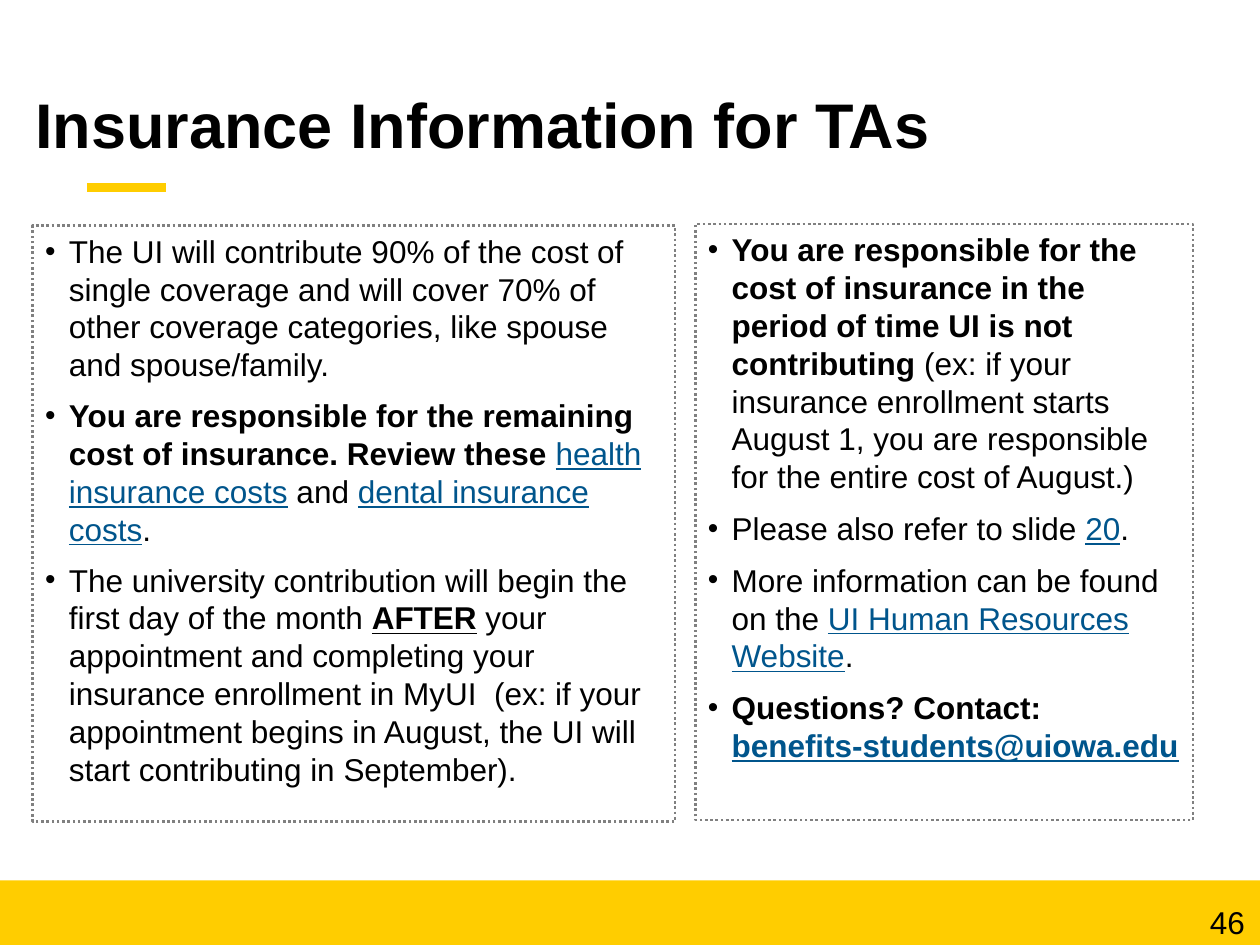
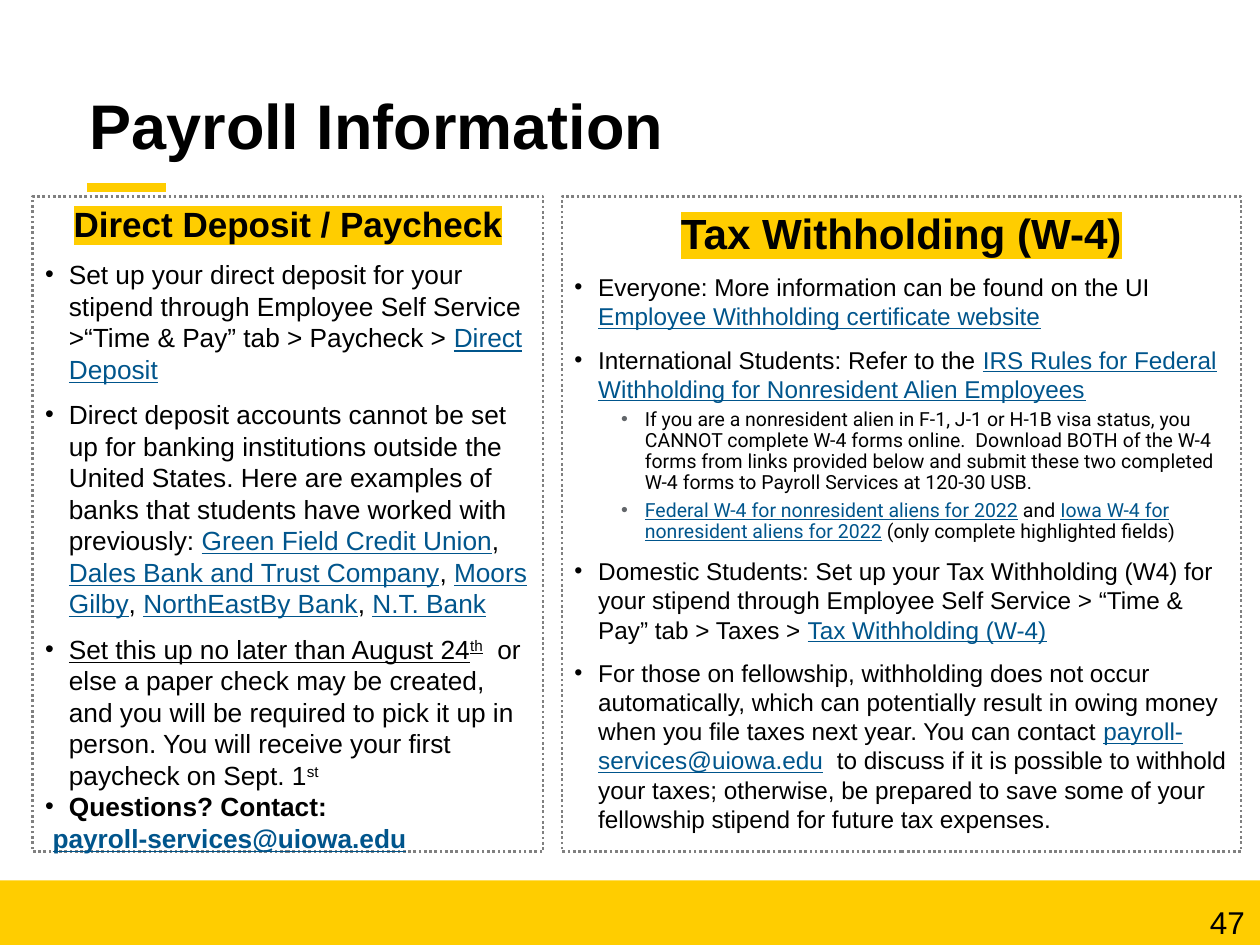
"""Build two slides on insurance and payroll for teaching assistants."""
from lxml import etree
from pptx import Presentation
from pptx.dml.color import RGBColor
from pptx.enum.dml import MSO_LINE
from pptx.enum.shapes import MSO_CONNECTOR, MSO_SHAPE
from pptx.enum.text import MSO_ANCHOR, PP_ALIGN
from pptx.oxml.ns import qn
from pptx.util import Cm, Pt

RECT = MSO_SHAPE.RECTANGLE
LINE = MSO_CONNECTOR.STRAIGHT
DOTS = MSO_LINE.ROUND_DOT
TOP, MID = MSO_ANCHOR.TOP, MSO_ANCHOR.MIDDLE
LEFT, CENTER = PP_ALIGN.LEFT, PP_ALIGN.CENTER

COLORS = {"gold": "FFCD00", "text": "000000", "link": "00558C",
          "edge": "808080", "mark": "62666A"}
FONT = "Arial"
WIDE, HIGH = 25.4, 19.05
PITCH = 1.2

# Run styles: b bold, u underlined, l link, s superscript, h highlighted
COVER = [
    ("item", [("The UI will contribute 90% of the cost of single coverage and will cover 70% of "
               "other coverage categories, like spouse and spouse/family.", "")]),
    ("item", [("You are responsible for the remaining cost of insurance. Review these ", "b"),
              ("health insurance costs", "l"), (" and ", ""),
              ("dental insurance costs", "l"), (".", "")]),
    ("item", [("The university contribution will begin the first day of the month ", ""),
              ("AFTER", "bu"),
              (" your appointment and completing your insurance enrollment in MyUI  (ex: if your "
               "appointment begins in August, the UI will start contributing in September).", "")]),
]
COSTS = [
    ("item", [("You are responsible for the cost of insurance in the period of time UI is not "
               "contributing ", "b"),
              ("(ex: if your insurance enrollment starts August 1, you are responsible for the "
               "entire cost of August.)", "")]),
    ("item", [("Please also refer to slide ", ""), ("20", "l"), (".", "")]),
    ("item", [("More information can be found on the ", ""),
              ("UI Human Resources Website", "l"), (".", "")]),
    ("item", [("Questions? Contact: ", "b"), ("benefits-students@uiowa.edu", "bl")]),
]
DEPOSIT = [
    ("head", [("Direct Deposit / Paycheck", "bh")]),
    ("item", [("Set up your direct deposit for your stipend through Employee Self Service "
               ">“Time & Pay” tab > Paycheck > ", ""), ("Direct Deposit", "l")]),
    ("item", [("Direct deposit accounts cannot be set up for banking institutions outside the "
               "United States. Here are examples of banks that students have worked with "
               "previously: ", ""),
              ("Green Field Credit Union", "l"), (", ", ""),
              ("Dales Bank and Trust Company", "l"), (", ", ""),
              ("Moors Gilby", "l"), (", ", ""), ("NorthEastBy Bank", "l"), (", ", ""),
              ("N.T. Bank", "l")]),
    ("item", [("Set this up no later than August 24", "u"), ("th", "us"),
              ("  or else a paper check may be created, and you will be required to pick it up "
               "in person. You will receive your first paycheck on Sept. 1", ""), ("st", "s")]),
    ("ask", [("Questions? Contact:", "b")]),
    ("mail", [("payroll-services@uiowa.edu", "bl")]),
]
TAX = [
    ("head", [("Tax Withholding (W-4)", "bh")]),
    ("item", [("Everyone: More information can be found on the UI ", ""),
              ("Employee Withholding certificate website", "l")]),
    ("item", [("International Students: Refer to the ", ""),
              ("IRS Rules for Federal Withholding for Nonresident Alien Employees", "l")]),
    ("sub", [("If you are a nonresident alien in F-1, J-1 or H-1B visa status, you CANNOT complete "
              "W-4 forms online.  Download BOTH of the W-4 forms from links provided below and "
              "submit these two completed W-4 forms to Payroll Services at 120-30 USB.", "")]),
    ("sub", [("Federal W-4 for nonresident aliens for 2022", "l"), (" and ", ""),
             ("Iowa W-4 for nonresident aliens for 2022", "l"),
             (" (only complete highlighted fields)", "")]),
    ("item", [("Domestic Students: Set up your Tax Withholding (W4) for your stipend through "
               "Employee Self Service > “Time & Pay” tab > Taxes > ", ""),
              ("Tax Withholding (W-4)", "l")]),
    ("item", [("For those on fellowship, withholding does not occur automatically, which can "
               "potentially result in owing money when you file taxes next year. You can "
               "contact ", ""), ("payroll-services@uiowa.edu", "l"),
              ("  to discuss if it is possible to withhold your taxes; otherwise, be prepared to "
               "save some of your fellowship stipend for future tax expenses.", "")]),
]

# Box: left, top, width, height in cm, then item size, head size, head scale, gap before items
SLIDES = [
    {"title": "Insurance Information for TAs", "left": 0.46, "top": 1.35, "page": "46",
     "boxes": [((0.66, 4.55, 12.95, 12.01), 18, 18, 1, 7.5, COVER),
               ((14.02, 4.52, 10.03, 12.01), 18, 18, 1, 8, COSTS)]},
    {"title": "Payroll Information", "left": 1.55, "top": 1.37, "page": "47",
     "boxes": [((0.66, 3.96, 10.29, 13.21), 15, 20, 1, 8, DEPOSIT),
               ((11.33, 3.96, 13.69, 13.21), 13.9, 24.1, 1.1, 8, TAX)]},
]


def rgb(name):
    return RGBColor.from_string(COLORS[name])


def add_run(para, text, style, size, face=FONT):
    run = para.add_run()
    run.text = text
    font = run.font
    font.size, font.name = Pt(size), face
    font.bold = "b" in style
    font.underline = "u" in style or "l" in style
    font.color.rgb = rgb("link" if "l" in style else "text")
    props = font._element
    if "s" in style:
        props.set("baseline", "30000")
    if "h" in style:
        mark = etree.Element(qn("a:highlight"))
        etree.SubElement(mark, qn("a:srgbClr"), val=COLORS["gold"])
        props.find(qn("a:latin")).addprevious(mark)


def set_para(para, size, scale=1, gap=0, align=LEFT):
    para.alignment = align
    para.line_spacing = Pt(round(size * PITCH * scale, 1))
    para.space_before = Pt(gap)


def indent(para, left, hang):
    props = para._p.get_or_add_pPr()
    props.set("marL", str(Cm(left)))
    props.set("indent", str(-Cm(hang)))
    return props


def add_mark(para, kind):
    sub = kind == "sub"
    props = indent(para, 1.42 if sub else 0.48, 0.48)
    if sub:
        tint = etree.SubElement(props, qn("a:buClr"))
        etree.SubElement(tint, qn("a:srgbClr"), val=COLORS["mark"])
    else:
        etree.SubElement(props, qn("a:buSzPct"), val="95000")
    etree.SubElement(props, qn("a:buFont"), typeface=FONT)
    etree.SubElement(props, qn("a:buChar"), char="•")


def add_rect(slide, place):
    shape = slide.shapes.add_shape(RECT, *map(Cm, place))
    shape.shadow.inherit = False
    return shape


def add_box(slide, place, size, big, scale, gap, paras):
    box = add_rect(slide, place)
    box.fill.background()
    box.line.color.rgb = rgb("edge")
    box.line.width = Pt(1.5)
    box.line.dash_style = DOTS
    frame = box.text_frame
    frame.word_wrap = True
    frame.vertical_anchor = TOP
    looks = {"head": (big, scale, 0, CENTER), "item": (size, 1, gap, LEFT),
             "sub": (11.1, 0.9, 3.8, LEFT), "ask": (size, 1, 0, LEFT),
             "mail": (size, 1, 0, LEFT)}
    for spot, (kind, runs) in enumerate(paras):
        para = frame.add_paragraph() if spot else frame.paragraphs[0]
        if kind in ("item", "sub", "ask"):
            add_mark(para, kind)
        elif kind == "mail":
            indent(para, 0.15, 0)
        points, ratio, lead, align = looks[kind]
        set_para(para, points, ratio, lead if spot else 0, align)
        face = "Roboto" if kind == "sub" else FONT
        for text, style in runs:
            add_run(para, text, style, points, face)


def add_frame(slide, page):
    dash = slide.shapes.add_connector(LINE, Cm(1.75), Cm(3.78), Cm(3.35), Cm(3.78))
    dash.line.color.rgb = rgb("gold")
    dash.line.width = Pt(5)
    etree.SubElement(dash._element.spPr, qn("a:effectLst"))
    band = add_rect(slide, (0, 17.75, WIDE, HIGH - 17.75))
    band.fill.solid()
    band.fill.fore_color.rgb = rgb("gold")
    band.line.fill.background()
    note = slide.shapes.add_textbox(Cm(24.14), Cm(18.08), Cm(1.22), Cm(1.02))
    note.text_frame.word_wrap = False
    para = note.text_frame.paragraphs[0]
    set_para(para, 18)
    add_run(para, page, "", 18)


def set_title(slide, text, left, top):
    title = slide.shapes.title
    title.left, title.top, title.width, title.height = map(Cm, (left, top, 21.89, 2.41))
    title.text_frame.word_wrap = True
    title.text_frame.vertical_anchor = MID
    para = title.text_frame.paragraphs[0]
    set_para(para, 36, 0.9)
    add_run(para, text, "b", 36)


def main():
    deck = Presentation()
    deck.slide_width, deck.slide_height = Cm(WIDE), Cm(HIGH)
    for data in SLIDES:
        slide = deck.slides.add_slide(deck.slide_layouts[5])
        add_frame(slide, data["page"])
        set_title(slide, data["title"], data["left"], data["top"])
        for box in data["boxes"]:
            add_box(slide, *box)
    deck.save("out.pptx")


if __name__ == "__main__":
    main()
